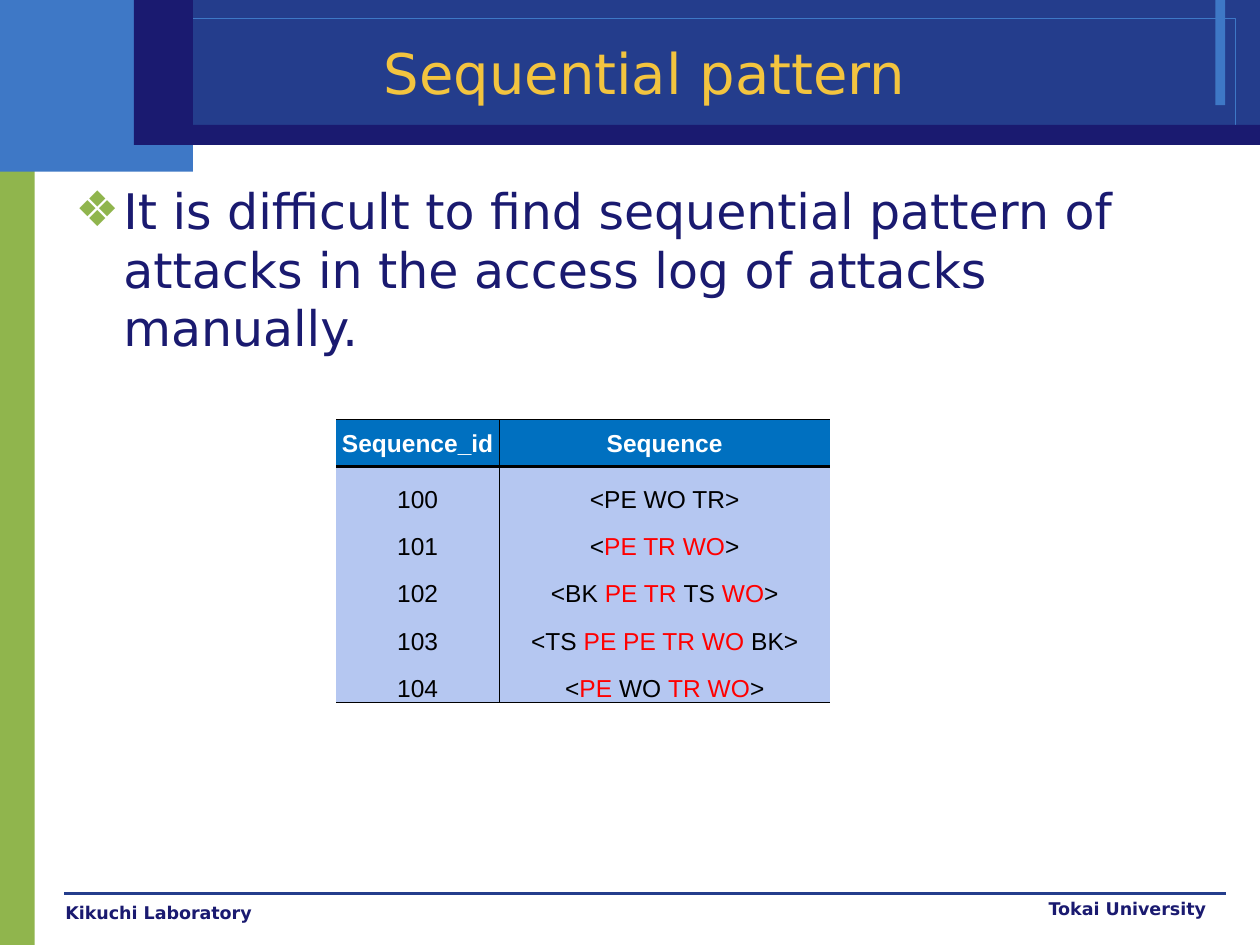
from typing import NamedTuple

from lxml import etree
from pptx import Presentation
from pptx.dml.color import RGBColor
from pptx.enum.shapes import MSO_CONNECTOR, MSO_SHAPE
from pptx.enum.text import MSO_ANCHOR, PP_ALIGN
from pptx.oxml.ns import qn
from pptx.util import Cm, Pt

RECTANGLE = MSO_SHAPE.RECTANGLE
STRAIGHT = MSO_CONNECTOR.STRAIGHT
LEFT, CENTER, RIGHT = PP_ALIGN.LEFT, PP_ALIGN.CENTER, PP_ALIGN.RIGHT
TOP, MIDDLE, BOTTOM = MSO_ANCHOR.TOP, MSO_ANCHOR.MIDDLE, MSO_ANCHOR.BOTTOM

NAVY, ROYAL, SKY, GREEN, GOLD = "1A1A70", "243D8C", "3E78C6", "90B54D", "F3C43F"
HEADER_BLUE, ROW_BLUE = "0070C0", "B5C7F1"
BLACK, WHITE, RED = "000000", "FFFFFF", "FF0000"
HEADING_FONT, TABLE_FONT = "DejaVu Sans", "Arial"


class Band(NamedTuple):
    left: float
    top: float
    width: float
    height: float
    fill: str | None = None
    outline: str | None = None


class Caption(NamedTuple):
    left: float
    top: float
    width: float
    height: float
    text: str
    size: int
    color: str = NAVY
    align: PP_ALIGN = LEFT
    anchor: MSO_ANCHOR = TOP
    bold: bool = False
    bullet: str | None = None


class SequenceRow(NamedTuple):
    sequence_id: str
    pieces: tuple[str, ...]


BANDS = [
    Band(0, 2.71, 0.7, 16.34, GREEN),
    Band(0, 0, 3.89, 3.46, SKY),
    Band(3.89, 0, 21.51, 2.92, ROYAL),
    Band(24.5, 0, 0.2, 2.12, SKY),
    Band(0.5, 0.37, 24.41, 2.16, outline=SKY),
    Band(3.3, 2.52, 22.1, 0.4, NAVY),
    Band(2.7, 0, 1.19, 2.92, NAVY),
]

CAPTIONS = [
    Caption(2.08, 0.66, 21.84, 1.57, "Sequential pattern", 32, GOLD, CENTER, MIDDLE),
    Caption(1.27, 3.51, 22.86, 14.58,
            "It is difficult to find sequential pattern of attacks in the "
            "access log of attacks manually.", 28, bullet="❖"),
    Caption(1.07, 18.06, 6.98, 0.64, "Kikuchi Laboratory", 10, bold=True),
    Caption(19.48, 17.98, 5.08, 0.64, "Tokai University", 10, align=RIGHT, bold=True),
]

HEADINGS = ("Sequence_id", "Sequence")
# Pieces alternate between plain and matching items, starting with plain.
SEQUENCES = [
    SequenceRow("100", ("<PE WO TR>",)),
    SequenceRow("101", ("<", "PE TR WO", ">")),
    SequenceRow("102", ("<BK ", "PE TR ", "TS ", "WO", ">")),
    SequenceRow("103", ("<TS ", "PE PE TR WO ", "BK>")),
    SequenceRow("104", ("<", "PE ", "WO ", "TR WO", ">")),
]
COLUMN_WIDTHS = (3.28, 6.68)
ROW_HEIGHT = 0.95


def paint(color_format, color: str) -> None:
    color_format.rgb = RGBColor.from_string(color)


def fill_with(fill, color: str | None) -> None:
    if color is None:
        fill.background()
    else:
        fill.solid()
        paint(fill.fore_color, color)


def add_run(paragraph, text: str, size: int, font: str, color: str, bold: bool) -> None:
    run = paragraph.add_run()
    run.text = text
    run.font.size, run.font.name, run.font.bold = Pt(size), font, bold
    paint(run.font.color, color)


def draw_band(slide, band: Band) -> None:
    shape = slide.shapes.add_shape(RECTANGLE, *map(Cm, band[:4]))
    shape.shadow.inherit = False
    fill_with(shape.fill, band.fill)
    fill_with(shape.line.fill, band.outline)
    if band.outline:
        shape.line.width = Pt(0)


def draw_footer_rule(slide) -> None:
    rule = slide.shapes.add_connector(STRAIGHT, Cm(1.3), Cm(18.01), Cm(24.71), Cm(18.01))
    rule.line.width = Pt(0)
    paint(rule.line.color, ROYAL)
    etree.SubElement(rule._element.spPr, qn("a:effectLst"))


def add_bullet(paragraph, symbol: str, color: str) -> None:
    properties = paragraph._p.get_or_add_pPr()
    indent = Cm(0.97)
    properties.set("marL", str(indent))
    properties.set("indent", str(-indent))
    bullet_color = etree.SubElement(properties, qn("a:buClr"))
    etree.SubElement(bullet_color, qn("a:srgbClr"), val=color)
    etree.SubElement(properties, qn("a:buFont"), typeface=HEADING_FONT)
    etree.SubElement(properties, qn("a:buChar"), char=symbol)


def write_caption(slide, caption: Caption) -> None:
    frame = slide.shapes.add_textbox(*map(Cm, caption[:4])).text_frame
    frame.word_wrap = True
    frame.vertical_anchor = caption.anchor
    paragraph = frame.paragraphs[0]
    paragraph.alignment = caption.align
    if caption.bullet:
        add_bullet(paragraph, caption.bullet, GREEN)
    add_run(paragraph, caption.text, caption.size, HEADING_FONT, caption.color, caption.bold)


def set_borders(cell, widths: dict[str, float]) -> None:
    properties = cell._tc.get_or_add_tcPr()
    for position, side in enumerate(("lnL", "lnR", "lnT", "lnB")):
        width = widths.get(side, 0)
        border = etree.Element(qn(f"a:{side}"), w=str(Pt(width)))
        if width:
            solid = etree.SubElement(border, qn("a:solidFill"))
            etree.SubElement(solid, qn("a:srgbClr"), val=BLACK)
        else:
            etree.SubElement(border, qn("a:noFill"))
        properties.insert(position, border)


def write_cell(cell, pieces: tuple[str, ...], is_header: bool) -> None:
    cell.margin_left = cell.margin_right = cell.margin_top = Cm(0.02)
    cell.margin_bottom = Cm(0)
    cell.vertical_anchor = MIDDLE if is_header else BOTTOM
    fill_with(cell.fill, HEADER_BLUE if is_header else ROW_BLUE)
    paragraph = cell.text_frame.paragraphs[0]
    paragraph.alignment = CENTER
    colors = (WHITE,) if is_header else (BLACK, RED)
    for index, piece in enumerate(pieces):
        add_run(paragraph, piece, 14, TABLE_FONT, colors[index % len(colors)], is_header)


def draw_sequence_table(slide) -> None:
    rows = [tuple((heading,) for heading in HEADINGS)]
    rows += [((entry.sequence_id,), entry.pieces) for entry in SEQUENCES]
    table = slide.shapes.add_table(
        len(rows), len(HEADINGS), Cm(6.78), Cm(8.46),
        Cm(sum(COLUMN_WIDTHS)), Cm(ROW_HEIGHT * len(rows))).table
    for column, width in zip(table.columns, COLUMN_WIDTHS):
        column.width = Cm(width)
    top_widths = {0: 0.5, 1: 2}
    bottom_widths = {0: 2, len(rows) - 1: 1}
    for row_index, row in enumerate(rows):
        table.rows[row_index].height = Cm(ROW_HEIGHT)
        for column_index, pieces in enumerate(row):
            cell = table.cell(row_index, column_index)
            write_cell(cell, pieces, row_index == 0)
            set_borders(cell, {
                "lnR" if column_index == 0 else "lnL": 0.5,
                "lnT": top_widths.get(row_index, 0),
                "lnB": bottom_widths.get(row_index, 0),
            })


def main() -> None:
    presentation = Presentation()
    presentation.slide_width, presentation.slide_height = Cm(25.4), Cm(19.05)
    slide = presentation.slides.add_slide(presentation.slide_layouts[6])
    for band in BANDS:
        draw_band(slide, band)
    draw_footer_rule(slide)
    for caption in CAPTIONS:
        write_caption(slide, caption)
    draw_sequence_table(slide)
    presentation.save("out.pptx")


if __name__ == "__main__":
    main()
